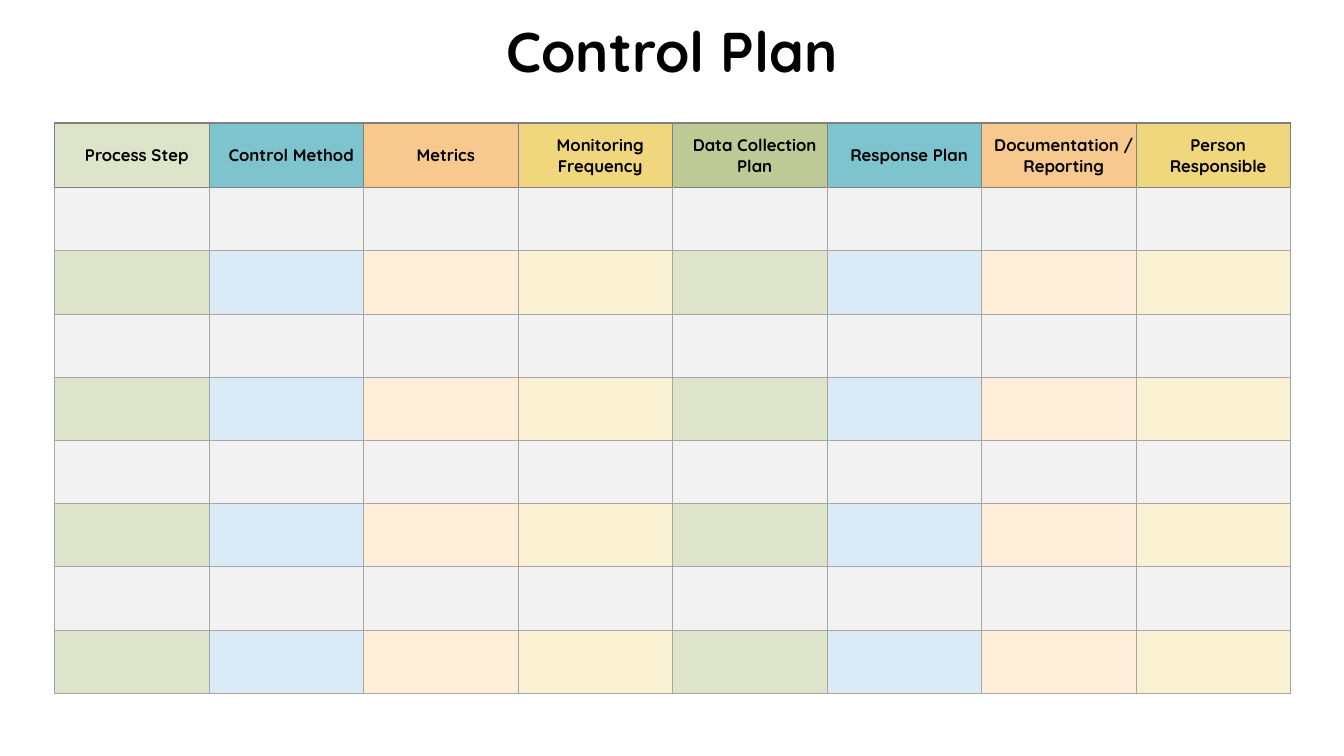
import pptx
import pptx.util
import pptx.dml.color
import pptx.enum.text
import pptx.oxml
import pptx.oxml.ns
from dataclasses import dataclass


@dataclass
class Theme:
    font: str = "Quicksand"
    title_size: int = 40
    header_size: int = 12
    text: str = "000000"
    header_fills: tuple = ("DEE4C9", "7EC4CF", "F8C98F", "F0D77D",
                           "BECA95", "7EC4CF", "F8C98F", "F0D77D")
    plain_fill: str = "F2F2F2"
    tint_fills: tuple = ("DEE4C9", "DAEAF6", "FDEDD9", "FAF1D3")
    header_line: str = "808080"
    body_line: str = "A6A6A6"


theme = Theme()
Inches = pptx.util.Inches
RGB = pptx.dml.color.RGBColor.from_string


def write(tf, text, size):
    """Put one centred bold paragraph in a text frame."""
    p = tf.paragraphs[0]
    p.alignment = pptx.enum.text.PP_ALIGN.CENTER
    r = p.add_run()
    r.text = text
    font = {"name": theme.font, "size": pptx.util.Pt(size), "bold": True}
    for name, value in font.items():
        setattr(r.font, name, value)
    r.font.color.rgb = RGB(theme.text)
    return p


def style_cell(cell, fill, borders):
    """Set the four borders, then the fill, as the schema orders them."""
    tc_pr = cell._tc.get_or_add_tcPr()
    for side, (color, width) in borders.items():
        tc_pr.append(pptx.oxml.parse_xml(
            f'<a:{side} {pptx.oxml.ns.nsdecls("a")} w="{pptx.util.Pt(width)}">'
            f'<a:solidFill><a:srgbClr val="{color}"/></a:solidFill></a:{side}>'))
    cell.fill.solid()
    cell.fill.fore_color.rgb = RGB(fill)


prs = pptx.Presentation()
prs.slide_width, prs.slide_height = Inches(13.33), Inches(7.5)
s = prs.slides.add_slide(prs.slide_layouts[6])

# Title
sp = s.shapes.add_textbox(Inches(4.85), Inches(0), Inches(3.63), Inches(1.08))
tf = sp.text_frame
tf.word_wrap = True
tf.vertical_anchor = pptx.enum.text.MSO_ANCHOR.MIDDLE
write(tf, "Control Plan", theme.title_size).line_spacing = 0.9

# Table grid
headers = ["Process Step", "Control Method", "Metrics", "Monitoring Frequency",
           "Data Collection Plan", "Response Plan",
           "Documentation / Reporting", "Person Responsible"]
body_rows = 8
width, height, header_height = 12.26, 5.66, 0.64
table = s.shapes.add_table(body_rows + 1, len(headers), Inches(0.54), Inches(1.22),
                           Inches(width), Inches(height)).table
for column in table.columns:
    column.width = Inches(width / len(headers))
for row in table.rows:
    row.height = Inches((height - header_height) / body_rows)
table.rows[0].height = Inches(header_height)

# Header row
header_line = (theme.header_line, 0.5)
header_borders = {"lnL": header_line, "lnR": header_line,
                  "lnT": (theme.header_line, 1.5), "lnB": header_line}
header_format = {"margin_left": Inches(0.1), "margin_right": 0,
                 "margin_top": 0, "margin_bottom": 0,
                 "vertical_anchor": pptx.enum.text.MSO_ANCHOR.MIDDLE}
for col, (text, fill) in enumerate(zip(headers, theme.header_fills)):
    cell = table.cell(0, col)
    for name, value in header_format.items():
        setattr(cell, name, value)
    style_cell(cell, fill, header_borders)
    write(cell.text_frame, text, theme.header_size)

# Body rows: plain and tinted in turn
body_line = (theme.body_line, 0.5)
for row in range(1, body_rows + 1):
    borders = {"lnL": body_line, "lnR": body_line,
               "lnT": header_line if row == 1 else body_line, "lnB": body_line}
    for col in range(len(headers)):
        tint = theme.tint_fills[col % len(theme.tint_fills)]
        style_cell(table.cell(row, col), theme.plain_fill if row % 2 else tint, borders)

prs.save("out.pptx")
